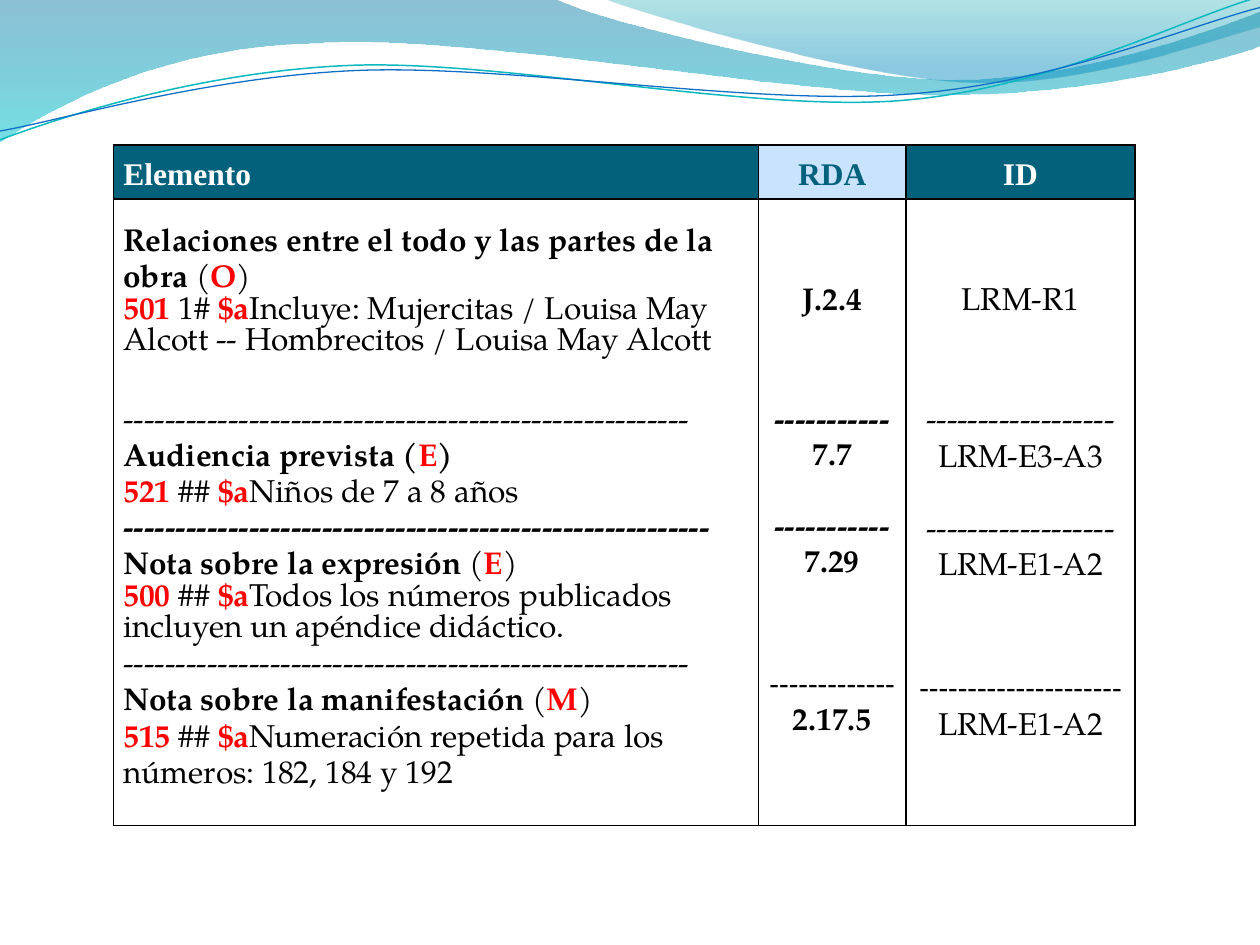
from dataclasses import dataclass

from lxml.etree import SubElement
from pptx import Presentation
from pptx.dml.color import RGBColor
from pptx.enum.text import MSO_ANCHOR, PP_ALIGN
from pptx.oxml.ns import qn
from pptx.util import Inches, Pt

BLACK = RGBColor(0, 0, 0)
WHITE = RGBColor(255, 255, 255)
RED = RGBColor(255, 0, 0)
TEAL = RGBColor(0x04, 0x61, 0x7B)
PALE_BLUE = RGBColor(0xC8, 0xE3, 0xFB)
BODY_FONT = "TeX Gyre Pagella"
HEAD_FONT = "Times New Roman"
RULE_FONT = "Calibri"
UNITS_PER_INCH = 100


@dataclass
class Stop:
    position: float
    color: RGBColor
    opacity: int


@dataclass
class Wave:
    start: tuple
    segments: list
    stops: tuple = ()
    line_color: RGBColor = None
    line_width: float = 0


@dataclass
class Piece:
    text: str
    bold: bool = False
    color: RGBColor = BLACK
    font: str = BODY_FONT


@dataclass
class Line:
    pieces: list
    spacing: float = 1.15
    before: float = 0


WAVES = [
    Wave((0, 0), [(4.4, -0.01), (4.76, 0.17, 6.64, 0.63, 7.58, 0.63),
                  (8.53, 0.63, 9.58, 0.26, 10, 0.09), (10.01, 0.36),
                  (9.83, 0.44, 8.7, 0.76, 7.46, 0.75), (6.22, 0.75, 3.82, 0.28, 2.57, 0.34),
                  (1.29, 0.36, 0.46, 0.83, -0.01, 1.13)],
         (Stop(0, RGBColor(0, 0x74, 0xA1), 45), Stop(1, RGBColor(0, 0xC6, 0xCF), 55))),
    Wave((4.79, -0.01), [(5.09, 0.11, 6.82, 0.62, 7.69, 0.65),
                         (8.56, 0.69, 9.61, 0.32, 10, 0.21), (10, 0)],
         (Stop(0, RGBColor(0, 0xA1, 0xA9), 30), Stop(0.8, RGBColor(0, 0x8B, 0xBF), 45))),
    Wave((0, 1.11), [(0.48, 0.93, 1.58, 0.57, 2.77, 0.52), (3.95, 0.47, 5.93, 0.89, 7.13, 0.8),
                     (8.33, 0.71, 9.38, 0.15, 9.98, -0.02)],
         line_color=RGBColor(0x0A, 0xB8, 0xBF), line_width=0.85),
    Wave((0, 1.04), [(0.47, 0.96, 1.64, 0.61, 2.83, 0.56), (4.03, 0.51, 5.97, 0.84, 7.17, 0.75),
                     (8.36, 0.67, 9.41, 0.21, 10, 0.06)],
         line_color=RGBColor(0x0F, 0x6F, 0xC6), line_width=0.75),
]


def to_units(values: tuple) -> list:
    return [round(value * UNITS_PER_INCH) for value in values]


def bend_segments(shape, segments: list, left: int, top: int) -> None:
    straights = list(shape.element.spPr.iter(qn("a:lnTo")))
    for straight, segment in zip(straights, segments):
        if len(segment) == 2:
            continue
        curve = straight.makeelement(qn("a:cubicBezTo"), {})
        units = to_units(segment)
        for x, y in zip(units[::2], units[1::2]):
            SubElement(curve, qn("a:pt"), x=str(x - left), y=str(y - top))
        straight.getparent().replace(straight, curve)


def draw_wave(slide, wave: Wave) -> None:
    ends = [to_units(point[-2:]) for point in [wave.start, *wave.segments]]
    builder = slide.shapes.build_freeform(*ends[0], scale=Inches(1) / UNITS_PER_INCH)
    builder.add_line_segments(ends[1:], close=bool(wave.stops))
    shape = builder.convert_to_shape()
    bend_segments(shape, wave.segments, min(x for x, _ in ends), min(y for _, y in ends))
    shape.shadow.inherit = False
    if not wave.stops:
        shape.fill.background()
        shape.line.color.rgb = wave.line_color
        shape.line.width = Pt(wave.line_width)
        return
    shape.line.fill.background()
    shape.fill.gradient()
    shape.fill.gradient_angle = 270
    for gradient_stop, stop in zip(shape.fill.gradient_stops, wave.stops):
        gradient_stop.position = stop.position
        gradient_stop.color.rgb = stop.color
    for color, stop in zip(shape.element.spPr.iter(qn("a:srgbClr")), wave.stops):
        SubElement(color, qn("a:alpha"), val=str(stop.opacity * 1000))


def set_borders(cell, sides: str) -> None:
    properties = cell._tc.get_or_add_tcPr()
    for index, side in enumerate("LRTB"):
        border = properties.makeelement(qn(f"a:ln{side}"), {"w": str(Pt(1))})
        properties.insert(index, border)
        if side in sides:
            solid = SubElement(border, qn("a:solidFill"))
            SubElement(solid, qn("a:srgbClr"), val=str(BLACK))
        else:
            SubElement(border, qn("a:noFill"))


def fill_cell(cell, lines: list, alignment, anchor, sides: str,
              background: RGBColor = None, top: float = 0) -> None:
    cell.margin_left = cell.margin_right = Inches(0.08)
    cell.margin_top, cell.margin_bottom = Inches(top), 0
    cell.vertical_anchor = anchor
    if background is None:
        cell.fill.background()
    else:
        cell.fill.solid()
        cell.fill.fore_color.rgb = background
    set_borders(cell, sides)
    frame = cell.text_frame
    for index, line in enumerate(lines):
        paragraph = frame.add_paragraph() if index else frame.paragraphs[0]
        paragraph.alignment = alignment
        paragraph.line_spacing = line.spacing
        paragraph.space_before = Pt(line.before)
        for piece in line.pieces:
            run = paragraph.add_run()
            run.text = piece.text
            run.font.size = Pt(18)
            run.font.name = piece.font
            run.font.bold = piece.bold
            run.font.color.rgb = piece.color


def heading(name: str, level: str, bold_brackets: bool = False) -> Line:
    return Line([Piece(name, True), Piece(" (", bold_brackets),
                 Piece(level, True, RED), Piece(")", bold_brackets)])


def field(tag: str, indicators: str, content: str, spacing: float = 1.15) -> Line:
    return Line([Piece(tag, True, RED), Piece(f" {indicators} "),
                 Piece("$a", True, RED), Piece(content)], spacing)


def rule(length: int, bold: bool = False, font: str = BODY_FONT, before: float = 0) -> Line:
    return Line([Piece("-" * length, bold, font=font)], before=before)


def code_column(codes: list, bold: bool, short: int, long: int) -> list:
    rules = [rule(short, bold), rule(short, bold, before=20.4),
             rule(long, font=RULE_FONT, before=45)]
    return [line for divider, code in zip(rules, codes)
            for line in (divider, Line([Piece(code, bold)]))]


WHOLE_PART = [
    heading("Relaciones entre el todo y las partes de la obra", "O"),
    field("501", "1#", "Incluye: Mujercitas / Louisa May Alcott -- Hombrecitos / Louisa May Alcott", 1),
]
NOTES = [
    rule(54),
    heading("Audiencia prevista", "E", True),
    field("521", "##", "Niños de 7 a 8 años"),
    rule(56, True),
    heading("Nota sobre la expresión", "E"),
    field("500", "##", "Todos los números publicados incluyen un apéndice didáctico.", 1),
    rule(54),
    heading("Nota sobre la manifestación", "M"),
    field("515", "##", "Numeración repetida para los números: 182, 184 y 192"),
]
RDA_CODES = code_column(["7.7", "7.29", "2.17.5"], True, 11, 13)
ID_CODES = code_column(["LRM-E3-A3", "LRM-E1-A2", "LRM-E1-A2"], False, 18, 21)
HEADERS = [("Elemento", WHITE, TEAL), ("RDA", TEAL, PALE_BLUE), ("ID", WHITE, TEAL)]
FIRST_ROW = [WHOLE_PART, [Line([Piece("J.2.4", True)])], [Line([Piece("LRM-R1")])]]
SECOND_ROW = [NOTES, RDA_CODES, ID_CODES]


def draw_table(slide) -> None:
    widths, heights = (5.12, 1.17, 1.82), (0.43, 1.62, 3.35)
    table = slide.shapes.add_table(3, 3, Inches(0.9), Inches(1.15),
                                   Inches(sum(widths)), Inches(sum(heights))).table
    table.first_row = table.horz_banding = False
    for row, height in zip(table.rows, heights):
        row.height = Inches(height)
    for index, width in enumerate(widths):
        table.columns[index].width = Inches(width)
        alignment = PP_ALIGN.CENTER if index else PP_ALIGN.LEFT
        label, color, background = HEADERS[index]
        fill_cell(table.cell(0, index), [Line([Piece(label, True, color, HEAD_FONT)])],
                  alignment, MSO_ANCHOR.MIDDLE, "LRTB", background)
        fill_cell(table.cell(1, index), FIRST_ROW[index], alignment,
                  MSO_ANCHOR.MIDDLE if index else MSO_ANCHOR.TOP, "LRT",
                  top=0 if index else 0.2)
        fill_cell(table.cell(2, index), SECOND_ROW[index], alignment, MSO_ANCHOR.TOP, "LRB")


def main() -> None:
    presentation = Presentation()
    presentation.slide_width, presentation.slide_height = Inches(10), Inches(7.5)
    slide = presentation.slides.add_slide(presentation.slide_layouts[6])
    for wave in WAVES:
        draw_wave(slide, wave)
    draw_table(slide)
    presentation.save("out.pptx")


if __name__ == "__main__":
    main()
